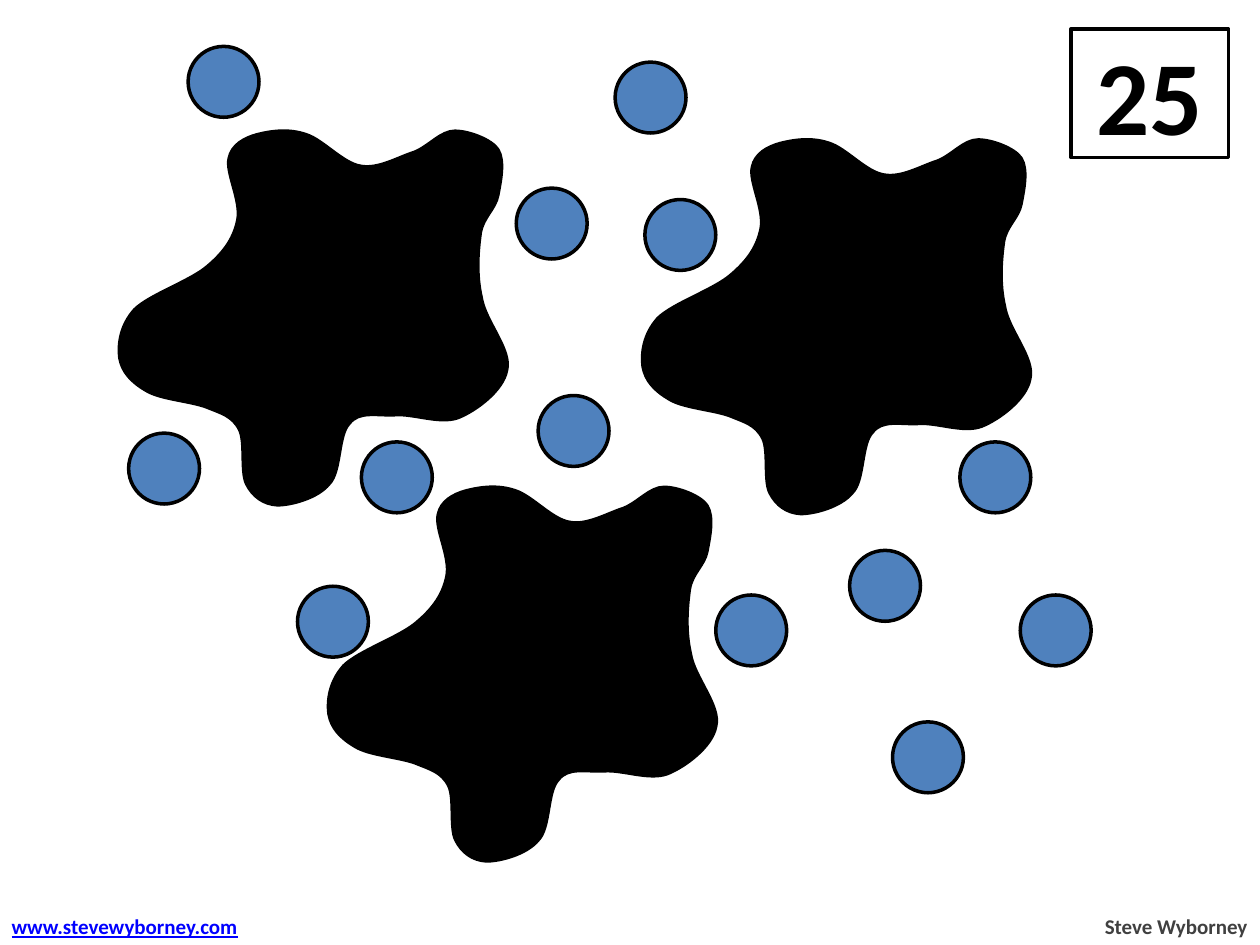
from lxml import etree
from pptx import Presentation
from pptx.dml.color import RGBColor
from pptx.enum.shapes import MSO_SHAPE
from pptx.enum.text import MSO_ANCHOR, MSO_AUTO_SIZE, PP_ALIGN
from pptx.oxml.ns import qn
from pptx.util import Pt

RECTANGLE, OVAL = MSO_SHAPE.RECTANGLE, MSO_SHAPE.OVAL
LEFT, CENTER, RIGHT = PP_ALIGN.LEFT, PP_ALIGN.CENTER, PP_ALIGN.RIGHT
MIDDLE = MSO_ANCHOR.MIDDLE
FIT_SHAPE = MSO_AUTO_SIZE.SHAPE_TO_FIT_TEXT

COLORS = {"paper": "FFFFFF", "ink": "000000", "dot": "4F81BD",
          "credit": "404040", "address": "0000FF"}
FONT = "Calibri"
OUTLINE_WIDTH = 2

# All lengths below are in points.
PAGE_SIZE = (720, 540)
TOTAL = {"text": "25", "place": (612, 16.5, 90, 73.5)}
FOOTERS = [
    {"text": "Steve Wyborney", "place": (623.5, 518.5, 96.5, 21.5),
     "align": RIGHT, "color": "credit", "underline": False},
    {"text": "www.stevewyborney.com", "place": (-0.5, 518.5, 147.5, 21.5),
     "align": LEFT, "color": "address", "underline": True},
]

DOT_SIZE = 40.5
DOTS = [
    (107.5, 26.5), (351.5, 35.5), (295, 107.5), (368.5, 114), (307.5, 226),
    (73.5, 247.5), (206.5, 252.5), (548.5, 252.5), (170, 335), (485.5, 314.5),
    (409, 340), (583, 340), (510, 412.5),
]

SPLAT_OFFSETS = [(0, 0), (119.5, 203.5), (299, 5)]
SPLAT_START = (83.5, 223)
# Each row is one curve: two control points, then its end point.
SPLAT_CURVES = [
    ((75, 218), (70, 212.5), (68.5, 204.5)),
    ((67.5, 196.5), (69, 186), (77, 177)),
    ((85.5, 168.5), (109.5, 160.5), (119, 152)),
    ((129, 143.5), (134, 135.5), (136, 125.5)),
    ((138, 114.5), (129, 98.5), (131, 90.5)),
    ((132.5, 83), (139.5, 79), (147, 77)),
    ((155, 75), (165, 73.5), (175, 77)),
    ((184.5, 80), (196, 93.5), (206, 95)),
    ((216, 97), (227.5, 90), (237, 87)),
    ((245.5, 83.5), (252, 75), (260, 75)),
    ((268, 75), (281, 80), (284.5, 85.5)),
    ((288.5, 92), (286, 103.5), (284.5, 111.5)),
    ((283, 119.5), (276, 124), (274.5, 133)),
    ((273, 143.5), (272, 157), (275, 170)),
    ((277, 183.5), (292.5, 200), (289.5, 211.5)),
    ((287.5, 223), (272, 234.5), (262, 238.5)),
    ((251.5, 242.5), (236, 236), (225.5, 237)),
    ((215.5, 237.5), (205, 234.5), (199.5, 242)),
    ((193, 248.5), (195, 269.5), (188, 276.5)),
    ((181.5, 284.5), (166.5, 288.5), (158.5, 288.5)),
    ((150.5, 288), (144.5, 283.5), (141, 276.5)),
    ((137.5, 269.5), (140.5, 252.5), (137, 245.5)),
    ((133, 237.5), (126.5, 236), (118, 232.5)),
    ((108.5, 229), (91.5, 228), SPLAT_START),
]


def color(name):
    return RGBColor.from_string(COLORS[name])


def in_points(values):
    return [Pt(value) for value in values]


def paint(shape, fill):
    shape.shadow.inherit = False
    shape.fill.solid()
    shape.fill.fore_color.rgb = color(fill)
    shape.line.color.rgb = color("ink")
    shape.line.width = Pt(OUTLINE_WIDTH)


def write(shape, text, align, text_color, formats):
    para = shape.text_frame.paragraphs[0]
    para.alignment = align
    span = para.add_run()
    span.text = text
    for name, value in {"name": FONT, "bold": True, **formats}.items():
        setattr(span.font, name, value)
    span.font.color.rgb = color(text_color)


def add_total(page):
    box = page.shapes.add_shape(RECTANGLE, *in_points(TOTAL["place"]))
    paint(box, "paper")
    box.text_frame.vertical_anchor = MIDDLE
    write(box, TOTAL["text"], CENTER, "ink", {"size": Pt(60)})


def add_footer(page, footer):
    box = page.shapes.add_textbox(*in_points(footer["place"]))
    box.text_frame.word_wrap = False
    box.text_frame.auto_size = FIT_SHAPE
    write(box, footer["text"], footer["align"], footer["color"],
          {"size": Pt(12), "underline": footer["underline"]})


def bend(shape):
    """Turn every three straight segments of a freeform into one cubic curve."""
    outline = next(shape.element.iter(qn("a:path")))
    lines = outline.findall(qn("a:lnTo"))
    for first in range(0, len(lines), 3):
        curve = etree.Element(qn("a:cubicBezTo"))
        lines[first].addprevious(curve)
        for line in lines[first:first + 3]:
            curve.append(line[0])
            outline.remove(line)


def add_splat(page, offset):
    def moved(point):
        return in_points(value + shift for value, shift in zip(point, offset))

    builder = page.shapes.build_freeform(*moved(SPLAT_START))
    points = [moved(point) for curve in SPLAT_CURVES for point in curve]
    builder.add_line_segments(points, close=False)
    splat = builder.convert_to_shape()
    bend(splat)
    paint(splat, "ink")


def main():
    deck = Presentation()
    deck.slide_width, deck.slide_height = in_points(PAGE_SIZE)
    page = deck.slides.add_slide(deck.slide_layouts[6])
    add_total(page)
    for footer in FOOTERS:
        add_footer(page, footer)
    for corner in DOTS:
        place = in_points((*corner, DOT_SIZE, DOT_SIZE))
        paint(page.shapes.add_shape(OVAL, *place), "dot")
    for offset in SPLAT_OFFSETS:
        add_splat(page, offset)
    deck.save("out.pptx")


if __name__ == "__main__":
    main()
